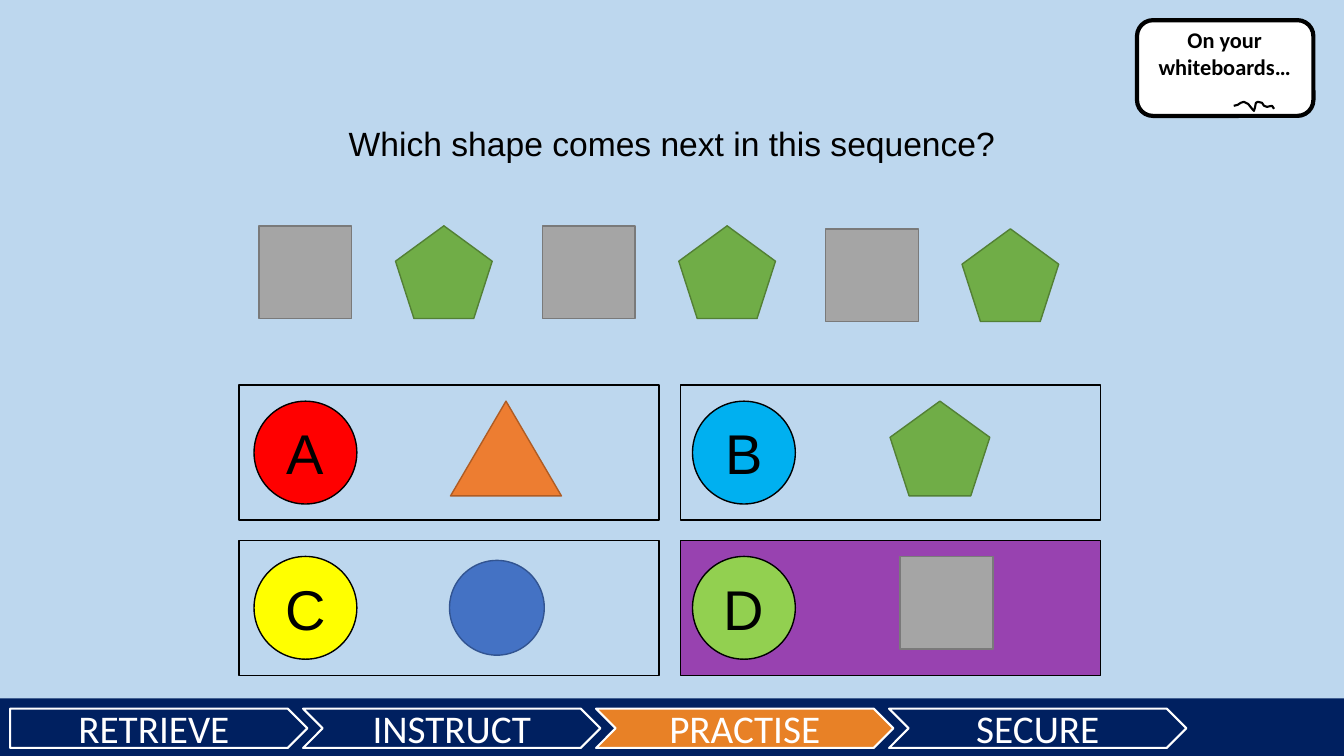
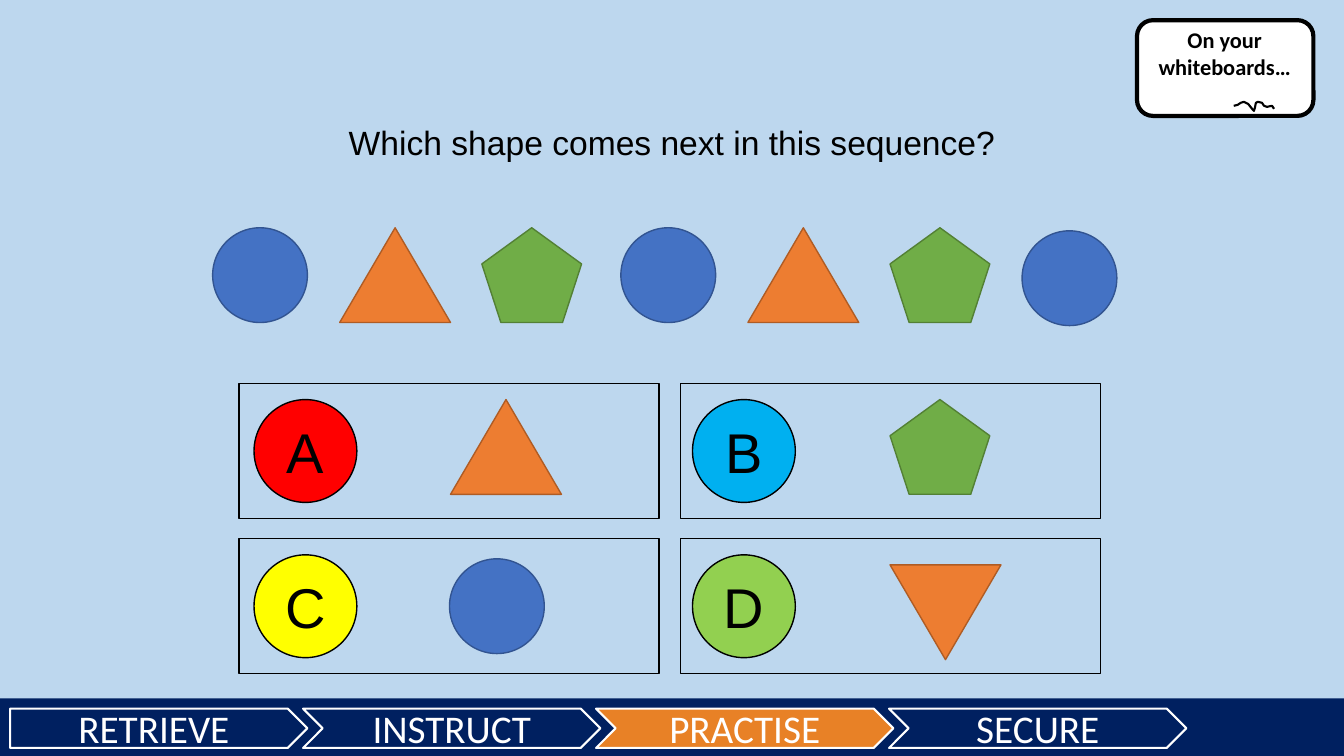
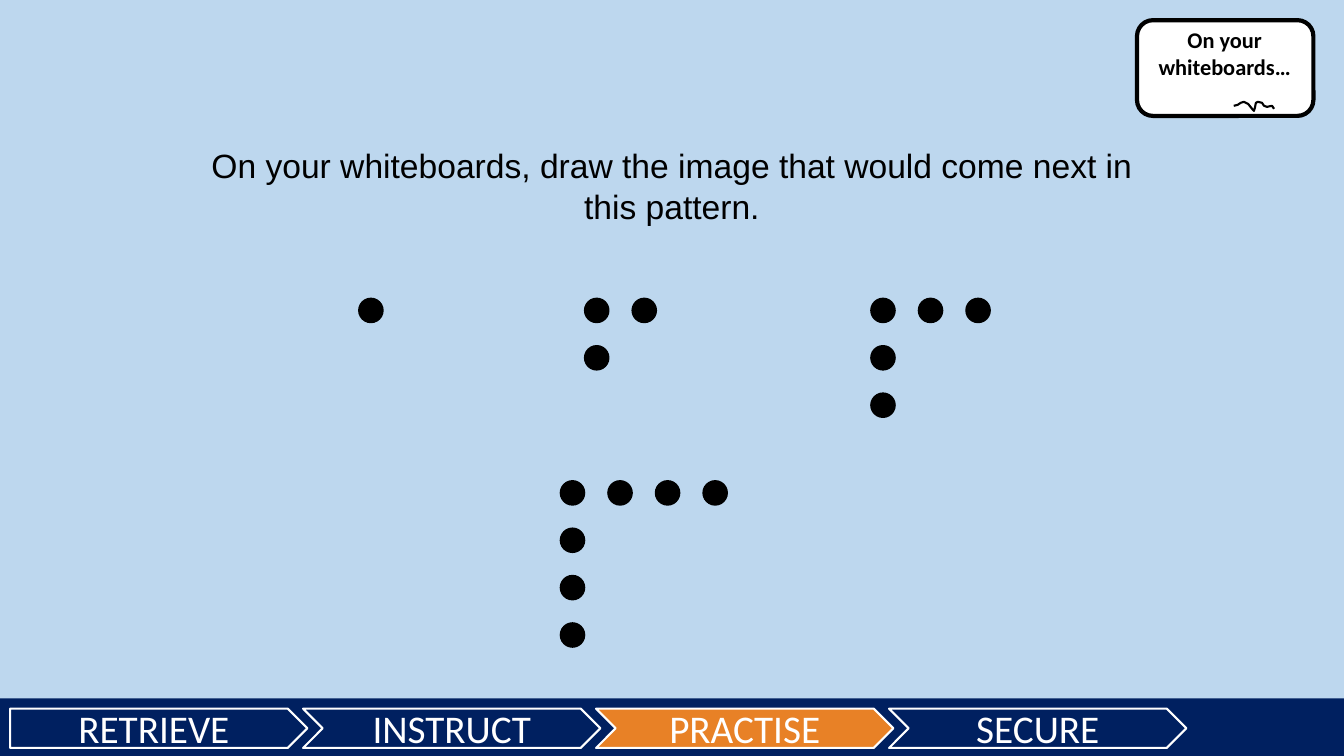
"""Build three practice slides on sequences and dot patterns."""
from pptx import Presentation
from pptx.dml.color import RGBColor
from pptx.enum.shapes import MSO_SHAPE
from pptx.enum.text import MSO_ANCHOR, PP_ALIGN
from pptx.util import Emu, Pt

COLS, ROWS = 160, 90
CELL = 76200

SKY = RGBColor(0xBD, 0xD7, 0xEE)
NAVY = RGBColor(0x00, 0x20, 0x60)
AMBER = RGBColor(0xE8, 0x81, 0x26)
WHITE = RGBColor(0xFF, 0xFF, 0xFF)
BLACK = RGBColor(0x00, 0x00, 0x00)
PURPLE = RGBColor(0x98, 0x42, 0xB0)
RED = RGBColor(0xFF, 0x00, 0x00)
CYAN = RGBColor(0x00, 0xB0, 0xF0)
YELLOW = RGBColor(0xFF, 0xFF, 0x00)
LIME = RGBColor(0x92, 0xD0, 0x50)
BLUE = RGBColor(0x44, 0x72, 0xC4)
BLUE_EDGE = RGBColor(0x32, 0x54, 0x91)
ORANGE = RGBColor(0xED, 0x7D, 0x31)
RUST = RGBColor(0xAF, 0x5C, 0x24)
GREEN = RGBColor(0x70, 0xAD, 0x47)
MOSS = RGBColor(0x53, 0x80, 0x35)
GREY = RGBColor(0xA5, 0xA5, 0xA5)
SLATE = RGBColor(0x7A, 0x7A, 0x7A)

CIRCLE = (MSO_SHAPE.OVAL, 11.28, 11.28, BLUE, BLUE_EDGE, 0)
TRIANGLE = (MSO_SHAPE.ISOSCELES_TRIANGLE, 13.2, 11.28, ORANGE, RUST, 0)
DOWN = (MSO_SHAPE.ISOSCELES_TRIANGLE, 13.2, 11.28, ORANGE, RUST, 180)
PENTA = (MSO_SHAPE.REGULAR_PENTAGON, 11.88, 11.28, GREEN, MOSS, 0)
SMALL = (MSO_SHAPE.REGULAR_PENTAGON, 11.52, 11.04, GREEN, MOSS, 0)
SQUARE = (MSO_SHAPE.RECTANGLE, 11.04, 11.04, GREY, SLATE, 0)

STAGES = ("RETRIEVE", "INSTRUCT", "PRACTISE", "SECURE")
BADGES = (("A", RED), ("B", CYAN), ("C", YELLOW), ("D", LIME))
SCRAWL = ((0, 4), (4, 3), (7, 1), (10, 0), (14, 2), (15, 3), (19, 8), (20, 9),
          (21, 6), (22, 1), (24, 0), (28, 1), (30, 4), (33, 5), (38, 4), (40, 7))
ASK = "Which shape comes next in this sequence?"


def grid(*cells):
    """Turn grid cells into slide lengths."""
    return [Emu(round(cell * CELL)) for cell in cells]


def write(shape, text, size=24, font="Arial", color=BLACK, bold=False,
          anchor=MSO_ANCHOR.MIDDLE):
    """Put one centred paragraph in a shape."""
    frame = shape.text_frame
    frame.word_wrap = True
    frame.vertical_anchor = anchor
    para = frame.paragraphs[0]
    para.alignment = PP_ALIGN.CENTER
    run = para.add_run()
    run.text = text
    run.font.size = Pt(size)
    run.font.name = font
    run.font.bold = bold
    run.font.color.rgb = color


class Deck:
    """Hold the style and the current slide."""

    def __init__(self):
        """Start an empty deck."""
        self.show = Presentation()
        self.show.slide_width, self.show.slide_height = grid(COLS, ROWS)
        self.slide = None

    def start(self, text, top, high=6):
        """Add a slide with its footer, board and question."""
        self.slide = self.show.slides.add_slide(self.show.slide_layouts[6])
        back = self.slide.background.fill
        back.solid()
        back.fore_color.rgb = SKY
        self.footer()
        self.board()
        self.label(text, 23.28, top, 113.4, high)

    def paint(self, shape, fill, line, width):
        """Set the fill and outline of a shape."""
        shape.shadow.inherit = False
        if fill is None:
            shape.fill.background()
        else:
            shape.fill.solid()
            shape.fill.fore_color.rgb = fill
        if line is None:
            shape.line.fill.background()
        else:
            shape.line.color.rgb = line
            shape.line.width = Pt(width)
        return shape

    def shape(self, kind, left, top, wide, high, fill=None, line=BLACK, width=1):
        """Add a preset shape."""
        item = self.slide.shapes.add_shape(kind, *grid(left, top, wide, high))
        return self.paint(item, fill, line, width)

    def label(self, text, left, top, wide, high, **style):
        """Add a text box."""
        box = self.slide.shapes.add_textbox(*grid(left, top, wide, high))
        write(box, text, anchor=MSO_ANCHOR.TOP, **style)

    def footer(self):
        """Add the band of lesson stages."""
        self.shape(MSO_SHAPE.RECTANGLE, 0, 83.16, COLS, 6.84, NAVY, None)
        for i, name in enumerate(STAGES):
            kind = MSO_SHAPE.CHEVRON if i else MSO_SHAPE.PENTAGON
            fill = AMBER if name == "PRACTISE" else NAVY
            stage = self.shape(kind, 1.2 + 34.88 * i, 84.36, 35.4, 4.68,
                               fill, WHITE, 1.5)
            write(stage, name, size=28, font="Calibri", color=WHITE)

    def board(self):
        """Add the whiteboard sign with its scrawl."""
        self.shape(MSO_SHAPE.ROUNDED_RECTANGLE, 135.36, 2.4, 21, 11.4,
                   WHITE, BLACK, 3)
        self.label("On your whiteboards…", 135.96, 2.52, 19.68, 7.68,
                   size=16, font="Calibri", bold=True)
        pen = self.slide.shapes.build_freeform(*SCRAWL[0], scale=CELL * 0.12)
        pen.add_line_segments(SCRAWL[1:], close=False)
        mark = pen.convert_to_shape(*grid(146.88, 12.12))
        self.paint(mark, None, BLACK, 1.5)

    def figure(self, look, left, top):
        """Add one of the sequence figures."""
        kind, wide, high, fill, line, turn = look
        self.shape(kind, left, top, wide, high, fill, line).rotation = turn

    def series(self, looks, top):
        """Add a row of figures, the given last ones a little lower."""
        for look, left, drop in looks:
            self.figure(look, left, top + drop)

    def answers(self, top, looks, right=None):
        """Add the two by two answer panels."""
        for i, ((letter, color), (look, left, drop)) in enumerate(zip(BADGES, looks)):
            row, col = divmod(i, 2)
            y = top + 18.48 * row
            fill = PURPLE if letter == right else None
            self.shape(MSO_SHAPE.RECTANGLE, 28.44 + 52.56 * col, y, 50.04, 16.08, fill)
            badge = self.shape(MSO_SHAPE.OVAL, 30.24 + 52.2 * col, y + 1.92,
                               12.24, 12.24, color)
            write(badge, letter, size=40)
            self.figure(look, left, y + drop)

    def corner(self, left, top, count):
        """Add dots along a row and down a column."""
        across = [(i, 0) for i in range(count)]
        down = [(0, i) for i in range(1, count)]
        for col, row in across + down:
            self.shape(MSO_SHAPE.OVAL, left + 5.66 * col, top + 5.64 * row,
                       2.88, 2.88, BLACK)


def main():
    """Build and save the deck."""
    deck = Deck()

    deck.start(ASK, 14.04)
    for i, drop in enumerate((0, 0, 0.36)):
        x = 30.84 + 33.72 * i
        deck.series(((SQUARE, x, drop), (SMALL, x + 16.25, drop)), 26.88)
    deck.answers(45.84, ((TRIANGLE, 53.64, 1.92), (PENTA, 105.96, 1.92),
                         (CIRCLE, 53.52, 2.4), (SQUARE, 107.16, 1.92)), right="D")

    deck.start(ASK, 13.92)
    for x in (25.32, 73.92):
        deck.series(((CIRCLE, x, 0), (TRIANGLE, x + 15.12, 0),
                     (PENTA, x + 32.04, 0)), 27.12)
    deck.figure(CIRCLE, 121.68, 27.48)
    deck.answers(45.65, ((TRIANGLE, 53.64, 1.92), (PENTA, 105.96, 1.92),
                         (CIRCLE, 53.52, 2.4), (DOWN, 105.96, 3.12)))

    deck.start("On your whiteboards, draw the image that would come next in "
               "this pattern.", 16.68, 10.92)
    for count, left in enumerate((42.72, 69.6, 103.68), 1):
        deck.corner(left, 35.52, count)
    deck.corner(66.72, 57.24, 4)

    deck.show.save("out.pptx")


if __name__ == "__main__":
    main()
